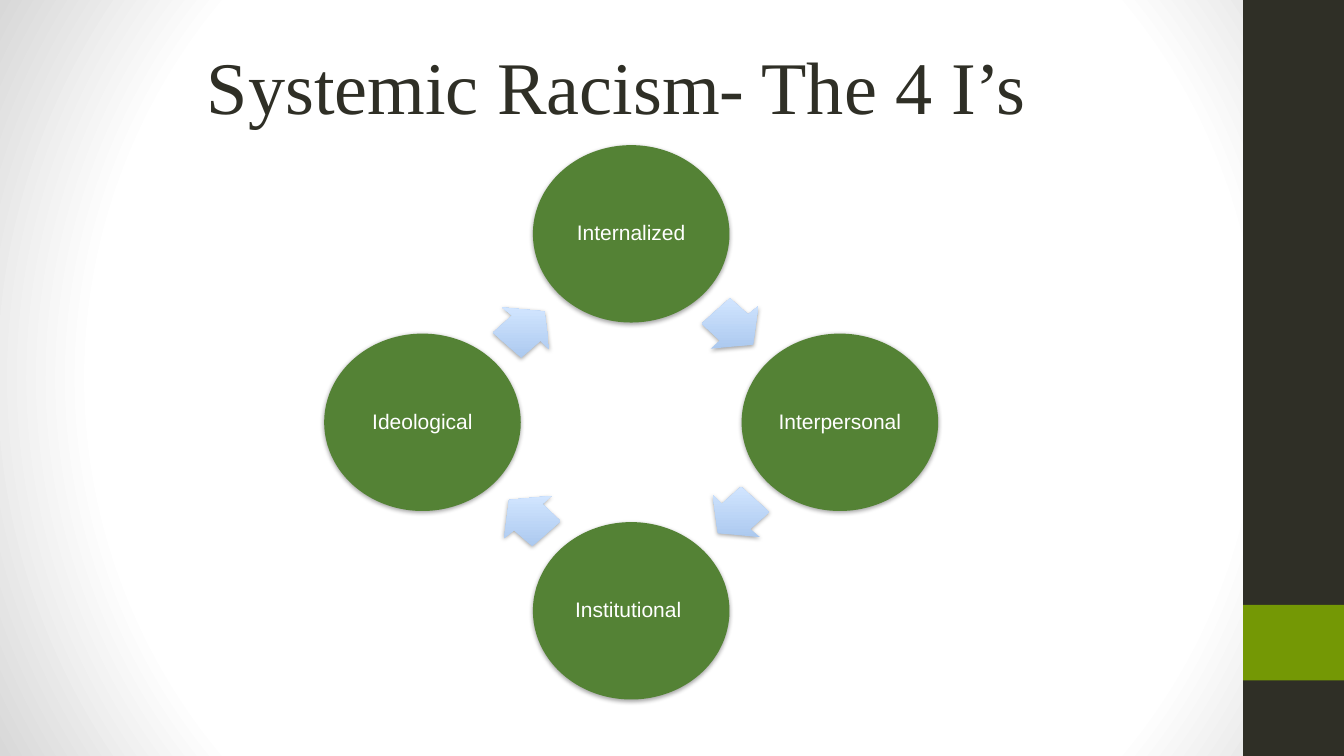
import pptx
import pptx.util
import pptx.dml.color
import pptx.enum.shapes
import pptx.enum.text
import pptx.oxml
import pptx.oxml.ns

Inches = pptx.util.Inches
COLORS = {
    "white": "FFFFFF", "edge": "D8D8D8", "dark": "2F2F26", "lime": "749805",
    "green": "548235", "blue": "ACC9EF", "pale": "D1E5FF",
}
RGB = {name: pptx.dml.color.RGBColor.from_string(code) for name, code in COLORS.items()}
NS = pptx.oxml.ns.nsdecls("a")
SHADOW = (
    f'<a:effectLst {NS}><a:outerShdw blurRad="38100" dist="12700" dir="5400000" '
    'rotWithShape="0"><a:srgbClr val="000000"><a:alpha val="35000"/></a:srgbClr>'
    '</a:outerShdw></a:effectLst>'
)
RADIAL = (
    f'<a:path {NS} path="circle">'
    '<a:fillToRect l="50000" t="50000" r="50000" b="50000"/></a:path>'
)


def style(frame, inset, size, font, color):
    """Centre the text in its frame and set its insets and font."""
    frame.word_wrap = True
    frame.auto_size = pptx.enum.text.MSO_AUTO_SIZE.NONE
    frame.vertical_anchor = pptx.enum.text.MSO_ANCHOR.MIDDLE
    frame.margin_left = frame.margin_right = Inches(inset)
    frame.margin_top = frame.margin_bottom = Inches(inset)
    line = frame.paragraphs[0]
    line.alignment = pptx.enum.text.PP_ALIGN.CENTER
    line.line_spacing = 0.9
    run = line.runs[0]
    run.font.size = pptx.util.Pt(size)
    run.font.name = font
    run.font.color.rgb = RGB[color]


def shade(shape):
    """Drop the outline and add a soft shadow below the shape."""
    shape.line.fill.background()
    shape.shadow.inherit = False
    props = shape._element.spPr
    old = props.find(pptx.oxml.ns.qn("a:effectLst"))
    props.replace(old, pptx.oxml.parse_xml(SHADOW))


deck = pptx.Presentation()
deck.slide_width = Inches(13.33)
deck.slide_height = Inches(7.5)
slide = deck.slides.add_slide(deck.slide_layouts[5])
shapes = slide.shapes

# Background: white centre fading to grey at the edges
back = slide.background.fill
back.gradient()
for stop, place, color in zip(back.gradient_stops, (0.75, 1), ("white", "edge")):
    stop.position = place
    stop.color.rgb = RGB[color]
lin = slide.background._cSld.find(".//" + pptx.oxml.ns.qn("a:lin"))
lin.getparent().replace(lin, pptx.oxml.parse_xml(RADIAL))

# Side bar
for top, height, color in ((0, 7.5, "dark"), (6, 0.75, "lime")):
    bar = shapes.add_shape(pptx.enum.shapes.MSO_SHAPE.RECTANGLE,
                           Inches(12.33), Inches(top), Inches(1), Inches(height))
    bar.shadow.inherit = False
    bar.fill.solid()
    bar.fill.fore_color.rgb = RGB[color]
    bar.line.fill.background()

title = shapes.title
title.left, title.top = Inches(0.46), Inches(0.35)
title.width, title.height = Inches(11.5), Inches(1.09)
title.text_frame.text = "Systemic Racism- The 4 I’s "
style(title.text_frame, 0.09, 53, "Times New Roman", "dark")

# Cycle of four circles around one centre
MID_X, MID_Y = 6.26, 4.19
STEP_X, STEP_Y = 2.07, 1.87
WIDE, HIGH = 1.95, 1.76
for label, col, row in (("Internalized", 0, -1), ("Interpersonal", 1, 0),
                        ("Institutional ", 0, 1), ("Ideological", -1, 0)):
    disc = shapes.add_shape(pptx.enum.shapes.MSO_SHAPE.OVAL,
                            Inches(MID_X + col * STEP_X - WIDE / 2),
                            Inches(MID_Y + row * STEP_Y - HIGH / 2),
                            Inches(WIDE), Inches(HIGH))
    disc.fill.solid()
    disc.fill.fore_color.rgb = RGB["green"]
    shade(disc)
    disc.text_frame.text = label
    style(disc.text_frame, 0.02, 15, "Arial", "white")

# Arrow outlines as offsets from the centre; each also appears turned half round
ARROWS = (
    ((0.98, -1.23), (1.16, -1.07), (1.26, -1.15), (1.21, -0.77),
     (0.79, -0.73), (0.88, -0.81), (0.7, -0.98)),
    ((1.37, 0.89), (1.18, 1.06), (1.28, 1.14), (0.86, 1.1),
     (0.81, 0.72), (0.9, 0.81), (1.09, 0.64)),
)
for sign in (1, -1):
    for arrow in ARROWS:
        spots = [(Inches(MID_X + sign * x), Inches(MID_Y + sign * y)) for x, y in arrow]
        pen = shapes.build_freeform(*spots[0])
        pen.add_line_segments(spots[1:], close=True)
        shape = pen.convert_to_shape()
        shape.fill.gradient()
        shape.fill.gradient_angle = 90
        for stop, place, color in zip(shape.fill.gradient_stops, (0, 1), ("blue", "pale")):
            stop.position = place
            stop.color.rgb = RGB[color]
        shade(shape)

deck.save("out.pptx")
